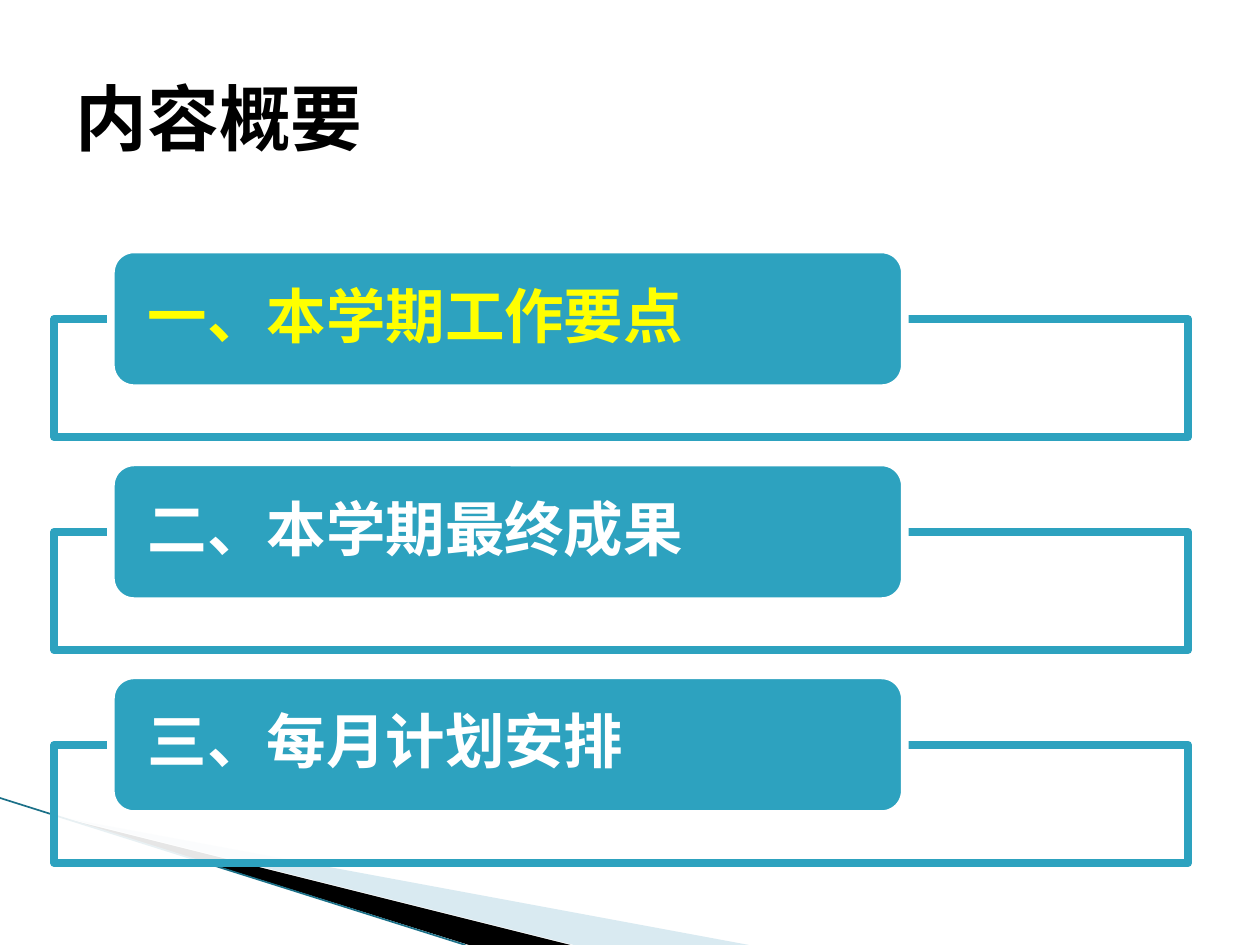
from lxml import etree
from pptx import Presentation
from pptx.dml.color import RGBColor
from pptx.enum import shapes, text
from pptx.oxml import ns
from pptx.util import Pt

TITLE = "内容概要"
TOPICS = ["一、本学期工作要点", "二、本学期最终成果", "三、每月计划安排"]
CURRENT_TOPIC = 0

FONT = "Noto Sans Mono"
TEAL = RGBColor(0x2D, 0xA2, 0xBF)
DARK_TEAL = RGBColor(0x1B, 0x70, 0x88)
PALE_BLUE = RGBColor(0xA0, 0xCB, 0xDC)
YELLOW = RGBColor(0xFF, 0xFF, 0x00)
WHITE = RGBColor(0xFF, 0xFF, 0xFF)
BLACK = RGBColor(0, 0, 0)

# Lengths in points
PALE_WEDGE = [(39.6, 468.5), (428, 540), (328, 540)]
BLACK_WEDGE = [(38.5, 467.5), (326, 540), (268, 540)]
EDGE_LINE = (0, 456, 266, 540)
ROW_PITCH = 121.7
FRAME = (31, 182.2, 648, 67.7)
LABEL = (63.4, 142.6, 453.6, 79.2)
BORDER = 4.33


def paint(shape, color, opacity=100, border=None):
    shape.shadow.inherit = False
    shape.fill.solid()
    shape.fill.fore_color.rgb = color
    if opacity < 100:
        color_node = shape.fill._xPr.find(".//" + ns.qn("a:srgbClr"))
        etree.SubElement(color_node, ns.qn("a:alpha"), val=str(opacity * 1000))
    if border is None:
        shape.line.fill.background()
    else:
        shape.line.color.rgb = border
        shape.line.width = Pt(BORDER)


def write(frame, words, size, color):
    """Fill a text frame with one bold, left-aligned, vertically centred line."""
    frame.text = words
    frame.word_wrap = True
    frame.auto_size = text.MSO_AUTO_SIZE.NONE
    frame.vertical_anchor = text.MSO_ANCHOR.MIDDLE
    para = frame.paragraphs[0]
    para.alignment = text.PP_ALIGN.LEFT
    font = para.runs[0].font
    font.name, font.size, font.bold = FONT, Pt(size), True
    font.color.rgb = color
    latin = font._element.find(ns.qn("a:latin"))
    latin.addnext(etree.Element(ns.qn("a:ea"), typeface=FONT))
    return para


def add_wedge(page, points, color, opacity=100):
    builder = page.shapes.build_freeform(*points[0], scale=Pt(1))
    builder.add_line_segments(points[1:])
    paint(builder.convert_to_shape(), color, opacity)


def add_box(page, preset, area, row):
    left, top, width, height = area
    return page.shapes.add_shape(
        preset, Pt(left), Pt(top + row * ROW_PITCH), Pt(width), Pt(height))


def add_topic(page, row, words):
    frame = add_box(page, shapes.MSO_SHAPE.RECTANGLE, FRAME, row)
    paint(frame, WHITE, 90, TEAL)
    label = add_box(page, shapes.MSO_SHAPE.ROUNDED_RECTANGLE, LABEL, row)
    paint(label, TEAL, border=WHITE)
    body = label.text_frame
    para = write(body, words, 34, YELLOW if row == CURRENT_TOPIC else WHITE)
    para.line_spacing = 0.9
    body.margin_left = body.margin_right = Pt(17.3)
    body.margin_top = body.margin_bottom = 0


def main():
    deck = Presentation()
    deck.slide_width, deck.slide_height = Pt(720), Pt(540)
    page = deck.slides.add_slide(deck.slide_layouts[5])

    title = page.shapes.title
    title.left, title.top, title.width, title.height = Pt(36), Pt(21.6), Pt(648), Pt(90)
    write(title.text_frame, TITLE, 41, BLACK)

    add_wedge(page, PALE_WEDGE, PALE_BLUE, 40)
    add_wedge(page, BLACK_WEDGE, BLACK)
    edge = page.shapes.add_connector(
        shapes.MSO_CONNECTOR.STRAIGHT, *(Pt(value) for value in EDGE_LINE))
    edge.line.color.rgb = DARK_TEAL
    edge.line.width = Pt(0.95)
    etree.SubElement(edge._element.spPr, ns.qn("a:effectLst"))

    for row, words in enumerate(TOPICS):
        add_topic(page, row, words)

    deck.save("out.pptx")


if __name__ == "__main__":
    main()
